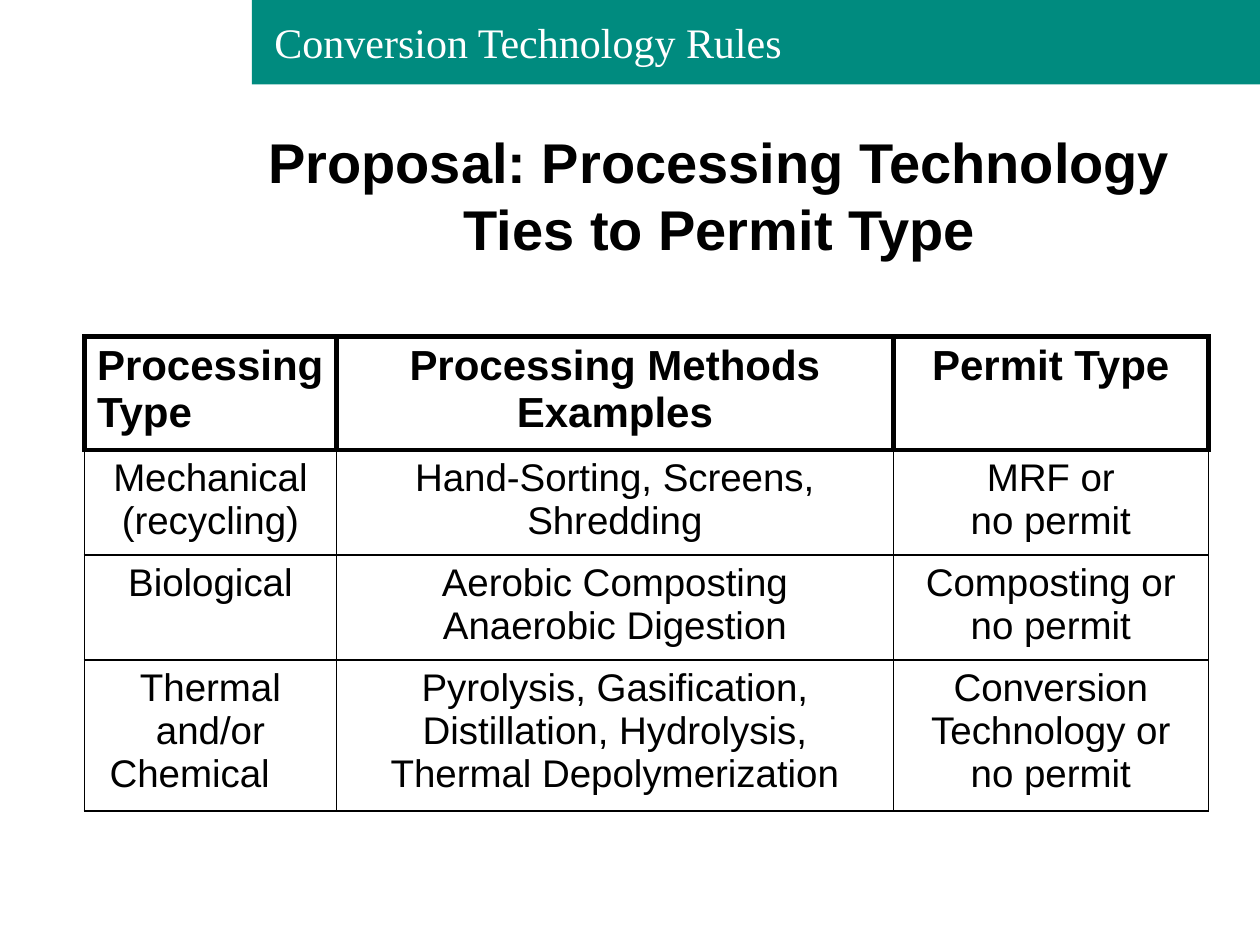
"""Build the slide on conversion technology permit types."""
from lxml import etree
from pptx import Presentation
from pptx.dml.color import RGBColor
from pptx.enum import shapes, text
from pptx.oxml.ns import qn
from pptx.util import Inches, Pt

HEADER = "Conversion Technology Rules"
TITLE = "Proposal: Processing Technology Ties to Permit Type"
ROWS = [
    [["Processing Type"], ["Processing Methods Examples"], ["Permit Type"]],
    [["Mechanical (recycling)"], ["Hand-Sorting, Screens, Shredding"], ["MRF or", "no permit"]],
    [["Biological"], ["Aerobic Composting", "Anaerobic Digestion"], ["Composting or no permit"]],
    [["Thermal and/or", "Chemical"],
     ["Pyrolysis, Gasification, Distillation, Hydrolysis, Thermal Depolymerization"],
     ["Conversion Technology or no permit"]],
]
COL_WIDTHS = [2, 4.42, 2.5]
ROW_HEIGHTS = [0.84, 0.78, 0.78, 1.12]
LEFT_ALIGNED = {"Processing Type": 0, "Chemical": 0.1}
BLACK, WHITE, TEAL = "000000", "FFFFFF", "008B7F"


def color(value):
    return RGBColor.from_string(value)


def write(tf, lines, size, name="Arial", fill=BLACK, bold=False, align=text.PP_ALIGN.CENTER):
    tf.word_wrap = True
    for i, line in enumerate(lines):
        p = tf.paragraphs[0] if i == 0 else tf.add_paragraph()
        p.text = line
        p.alignment = align
        if line in LEFT_ALIGNED:
            p.alignment = text.PP_ALIGN.LEFT
            p._p.get_or_add_pPr().set("marL", str(Inches(LEFT_ALIGNED[line])))
        p.font.size, p.font.name, p.font.bold = Pt(size), name, bold
        p.font.color.rgb = color(fill)


def set_borders(cell, widths):
    tc_pr = cell._tc.get_or_add_tcPr()
    for side, width in zip("LRTB", widths):
        ln = etree.SubElement(tc_pr, qn(f"a:ln{side}"), w=str(Pt(width)))
        solid = etree.SubElement(ln, qn("a:solidFill"))
        etree.SubElement(solid, qn("a:srgbClr"), val=BLACK)


def add_text(s, box, *args, **kwargs):
    tf = s.shapes.add_textbox(*map(Inches, box)).text_frame
    write(tf, *args, **kwargs)
    return tf


def add_permit_table(s):
    size = Inches(sum(COL_WIDTHS)), Inches(sum(ROW_HEIGHTS))
    table = s.shapes.add_table(len(ROWS), len(COL_WIDTHS), Inches(0.67), Inches(2.67), *size).table
    table.first_row = table.horz_banding = False
    for column, width in zip(table.columns, COL_WIDTHS):
        column.width = Inches(width)
    for r, (row, height) in enumerate(zip(ROWS, ROW_HEIGHTS)):
        table.rows[r].height = Inches(height)
        head = r == 0
        for c, lines in enumerate(row):
            cell = table.cell(r, c)
            write(cell.text_frame, lines, 24 if head else 22, bold=head)
            side = 3 if head else 1
            set_borders(cell, (side, side, 3 if r < 2 else 1, side))
            cell.fill.background()


def main():
    prs = Presentation()
    prs.slide_width, prs.slide_height = Inches(10), Inches(7.5)
    s = prs.slides.add_slide(prs.slide_layouts[6])
    band = s.shapes.add_shape(shapes.MSO_SHAPE.RECTANGLE, Inches(2), 0, Inches(8), Inches(0.67))
    band.shadow.inherit = False
    band.fill.solid()
    band.fill.fore_color.rgb = color(TEAL)
    band.line.fill.background()
    add_text(s, (2.08, 0.08, 7.67, 0.5), [HEADER], 24, "Times New Roman", WHITE,
             align=text.PP_ALIGN.LEFT)
    title = add_text(s, (1.92, 0.92, 7.58, 1.25), [TITLE], 32, bold=True)
    title.vertical_anchor = text.MSO_ANCHOR.MIDDLE
    add_permit_table(s)
    prs.save("out.pptx")


if __name__ == "__main__":
    main()
